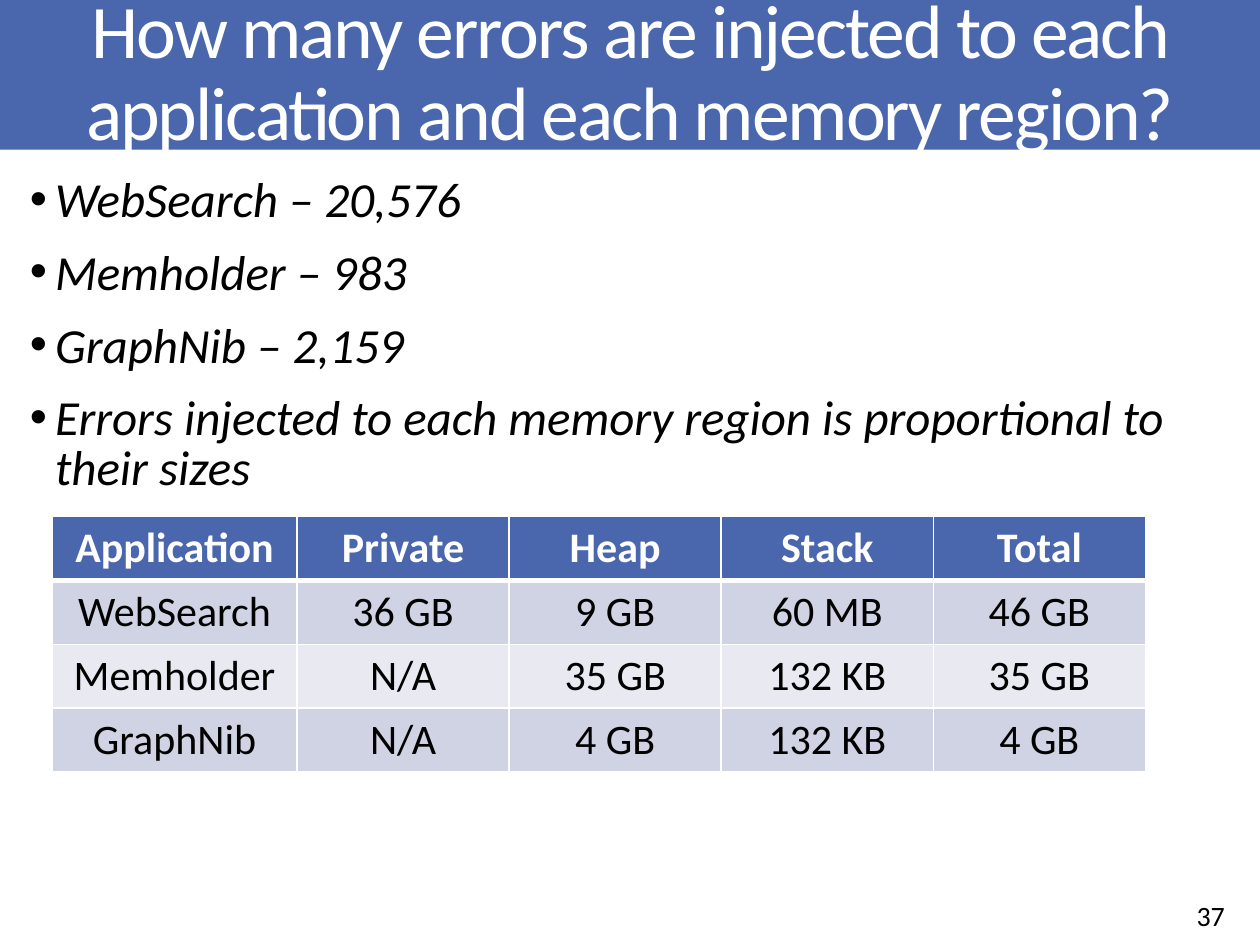
from dataclasses import dataclass, field
from typing import Any

from pptx import Presentation
from pptx.dml.color import RGBColor
from pptx.enum.shapes import MSO_SHAPE
from pptx.enum.text import MSO_ANCHOR as Anchor, PP_ALIGN as Align
from pptx.oxml.xmlchemy import OxmlElement as new_element
from pptx.util import Pt

COLORS = {
    "blue": "4A66AC",
    "white": "FFFFFF",
    "black": "000000",
    "dark_band": "D0D3E3",
    "light_band": "E9EAF1",
}


@dataclass(frozen=True)
class TextStyle:
    color: str
    font: dict[str, Any]
    paragraph: dict[str, Any] = field(default_factory=dict)


@dataclass(frozen=True)
class Box:
    left: float
    top: float
    width: float
    height: float

    def lengths(self) -> tuple[Pt, ...]:
        return tuple(Pt(value) for value in (self.left, self.top, self.width, self.height))


TITLE = TextStyle("white", {"size": Pt(43.2)}, {"alignment": Align.CENTER, "line_spacing": 0.9})
BULLET = TextStyle("black", {"size": Pt(28), "italic": True},
                   {"line_spacing": 0.85, "space_before": Pt(13)})
NUMBER = TextStyle("black", {"size": Pt(16)}, {"alignment": Align.RIGHT})
HEADER = TextStyle("white", {"size": Pt(24), "bold": True}, {"alignment": Align.CENTER})
CELL = TextStyle("black", {"size": Pt(24), "bold": False}, {"alignment": Align.CENTER})

TITLE_TEXT = "How many errors are injected to each application and each memory region?"
BULLETS = [
    "WebSearch – 20,576",
    "Memholder – 983",
    "GraphNib – 2,159",
    "Errors injected to each memory region is proportional to their sizes",
]
REGION_SIZES = [
    ["Application", "Private", "Heap", "Stack", "Total"],
    ["WebSearch", "36 GB", "9 GB", "60 MB", "46 GB"],
    ["Memholder", "N/A", "35 GB", "132 KB", "35 GB"],
    ["GraphNib", "N/A", "4 GB", "132 KB", "4 GB"],
]
COLUMN_WIDTHS = [140] + [121.2] * 4
ROW_HEIGHT = 36.5


def apply_format(target: Any, values: dict[str, Any]) -> None:
    for name, value in values.items():
        setattr(target, name, value)


def paint(target: Any, color: str) -> None:
    target.fill.solid()
    target.fill.fore_color.rgb = RGBColor.from_string(COLORS[color])


def write(paragraph: Any, text: str, style: TextStyle) -> Any:
    run = paragraph.add_run()
    run.text = text
    apply_format(paragraph, style.paragraph)
    apply_format(run.font, {"name": "Calibri", **style.font})
    run.font.color.rgb = RGBColor.from_string(COLORS[style.color])
    return run


def add_bullet(paragraph: Any, indent: float) -> None:
    properties = paragraph._p.get_or_add_pPr()
    properties.set("marL", str(Pt(indent)))
    properties.set("indent", str(-Pt(indent)))
    for tag, name, value in (("a:buFont", "typeface", "Arial"), ("a:buChar", "char", "•")):
        element = new_element(tag)
        element.set(name, value)
        properties.append(element)


def add_borders(cell: Any, widths: dict[str, float], color: str) -> None:
    properties = cell._tc.get_or_add_tcPr()
    for position, (side, width) in enumerate(widths.items()):
        line = new_element(f"a:ln{side}")
        line.set("w", str(Pt(width)))
        fill = new_element("a:solidFill")
        shade = new_element("a:srgbClr")
        shade.set("val", COLORS[color])
        fill.append(shade)
        line.append(fill)
        properties.insert(position, line)


def add_text_box(slide: Any, box: Box, anchor: Anchor) -> Any:
    frame = slide.shapes.add_textbox(*box.lengths()).text_frame
    apply_format(frame, {"word_wrap": True, "vertical_anchor": anchor})
    return frame


def add_title(slide: Any, box: Box) -> None:
    shape = slide.shapes.add_shape(MSO_SHAPE.RECTANGLE, *box.lengths())
    shape.shadow.inherit = False
    paint(shape, "blue")
    shape.line.fill.background()
    apply_format(shape.text_frame, {"word_wrap": True, "vertical_anchor": Anchor.MIDDLE})
    run = write(shape.text_frame.paragraphs[0], TITLE_TEXT, TITLE)
    run._r.get_or_add_rPr().set("spc", "-120")


def add_bullets(slide: Any, box: Box) -> None:
    frame = add_text_box(slide, box, Anchor.TOP)
    for index, text in enumerate(BULLETS):
        paragraph = frame.add_paragraph() if index else frame.paragraphs[0]
        write(paragraph, text, BULLET)
        add_bullet(paragraph, 14.4)


def add_size_table(slide: Any, left: float, top: float) -> None:
    box = Box(left, top, sum(COLUMN_WIDTHS), ROW_HEIGHT * len(REGION_SIZES))
    frame = slide.shapes.add_table(len(REGION_SIZES), len(COLUMN_WIDTHS), *box.lengths())
    table = frame.table
    for column, width in zip(table.columns, COLUMN_WIDTHS):
        column.width = Pt(width)
    for row_index, row in enumerate(REGION_SIZES):
        table.rows[row_index].height = Pt(ROW_HEIGHT)
        is_header = row_index == 0
        band = "blue" if is_header else ("light_band", "dark_band")[row_index % 2]
        widths = {"L": 1, "R": 1, "T": 3 if row_index == 1 else 1, "B": 3 if is_header else 1}
        for column_index, text in enumerate(row):
            cell = table.cell(row_index, column_index)
            write(cell.text_frame.paragraphs[0], text, HEADER if is_header else CELL)
            paint(cell, band)
            add_borders(cell, widths, "white")


def main() -> None:
    presentation = Presentation()
    apply_format(presentation, {"slide_width": Pt(720), "slide_height": Pt(540)})
    slide = presentation.slides.add_slide(presentation.slide_layouts[6])
    add_title(slide, Box(0, 0, 720, 85.5))
    add_bullets(slide, Box(10, 98, 700.5, 411))
    number_frame = add_text_box(slide, Box(545, 508.5, 162, 28.8), Anchor.MIDDLE)
    write(number_frame.paragraphs[0], "37", NUMBER)
    add_size_table(slide, 29.8, 295.2)
    presentation.save("out.pptx")


if __name__ == "__main__":
    main()
